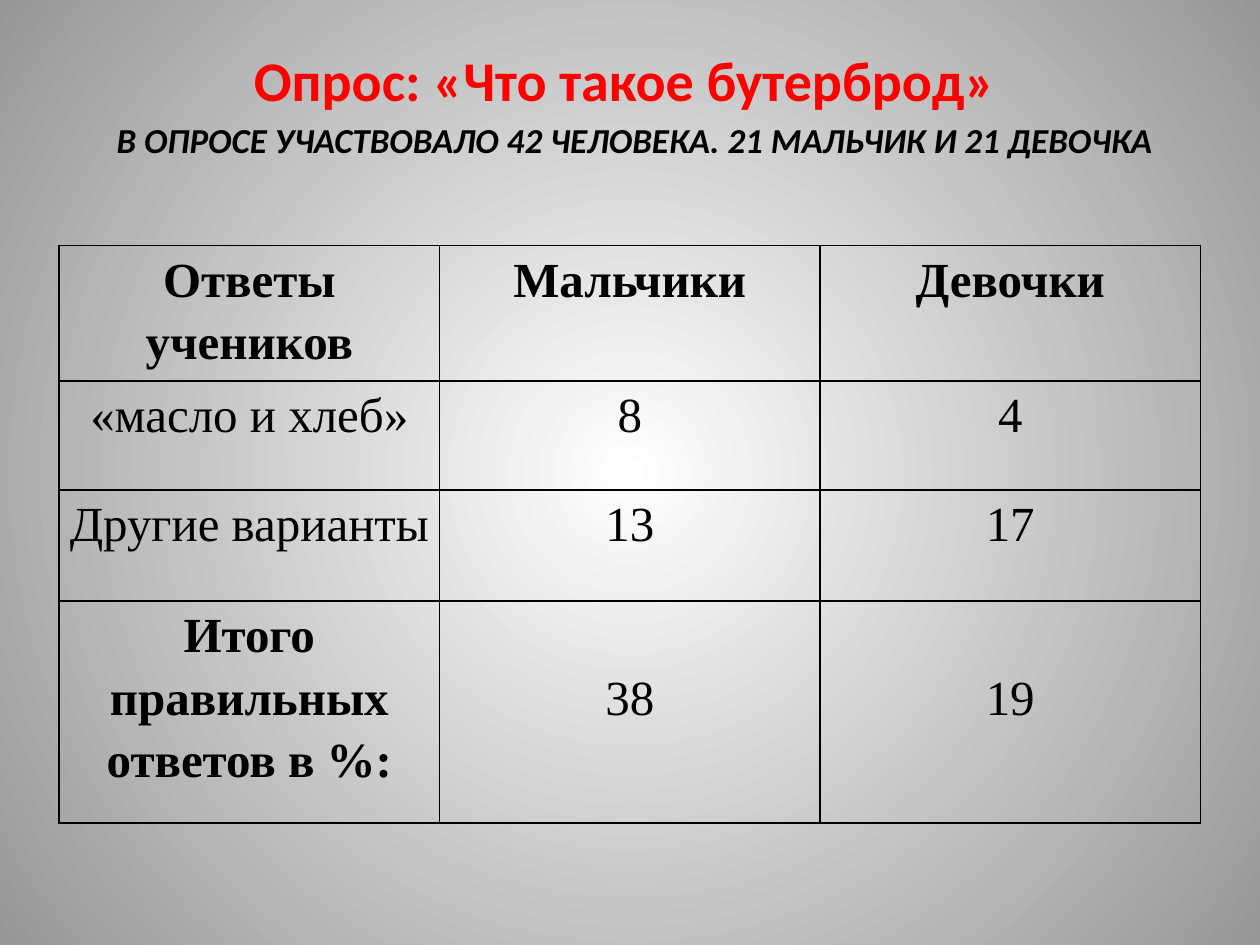
from lxml.etree import SubElement
from pptx import Presentation
from pptx.dml.color import RGBColor
from pptx.enum.text import MSO_ANCHOR, PP_ALIGN
from pptx.oxml import parse_xml
from pptx.oxml.ns import nsdecls, qn
from pptx.util import Cm, Pt

BLACK = RGBColor(0, 0, 0)
RED = RGBColor(255, 0, 0)
WHITE = RGBColor(255, 255, 255)
GREY = RGBColor(0x97, 0x97, 0x97)

TITLE = {"name": "Calibri", "size": Pt(32), "bold": True}
NOTE = {"name": "Calibri", "size": Pt(20), "bold": True, "italic": True}
CELL = {"name": "Times New Roman", "size": Pt(28)}


def write(frame, text, style, color):
    frame.word_wrap = True
    para = frame.paragraphs[0]
    para.alignment = PP_ALIGN.CENTER
    run = para.add_run()
    run.text = text
    for key, value in style.items():
        setattr(run.font, key, value)
    run.font.color.rgb = color
    return para


def border(cell):
    props = cell._tc.get_or_add_tcPr()
    for side in ("lnL", "lnR", "lnT", "lnB"):
        line = SubElement(props, qn(f"a:{side}"), w=str(Pt(1)))
        fill = SubElement(line, qn("a:solidFill"))
        SubElement(fill, qn("a:srgbClr"), val=str(BLACK))


deck = Presentation()
deck.slide_width, deck.slide_height = Cm(25.4), Cm(19.05)
slide = deck.slides.add_slide(deck.slide_layouts[5])

# Radial background
back = slide.background.fill
back.gradient()
for stop, color in zip(back.gradient_stops, (WHITE, GREY)):
    stop.color.rgb = color
lin = next(slide.element.iter(qn("a:lin")))
lin.getparent().replace(lin, parse_xml(
    f'<a:path {nsdecls("a")} path="circle">'
    '<a:fillToRect l="50000" t="50000" r="50000" b="50000"/></a:path>'))

# Heading
title = slide.shapes.title
title.left, title.top, title.width, title.height = (
    Cm(1.98), Cm(0.79), Cm(21.23), Cm(1.63))
title.text_frame.vertical_anchor = MSO_ANCHOR.TOP
write(title.text_frame, "Опрос: «Что такое бутерброд»", TITLE, RED)

note = slide.shapes.add_textbox(Cm(1.4), Cm(1.4), Cm(22.8), Cm(1.96))
note.text_frame.vertical_anchor = MSO_ANCHOR.BOTTOM
write(note.text_frame,
      "В ОПРОСЕ УЧАСТВОВАЛО 42 ЧЕЛОВЕКА. 21 МАЛЬЧИК И 21 ДЕВОЧКА",
      NOTE, BLACK)

# Survey results
rows = [
    ("Ответы учеников", "Мальчики", "Девочки"),
    ("«масло и хлеб»", "8", "4"),
    ("Другие варианты", "13", "17"),
    ("Итого правильных ответов в %:", "38", "19"),
]
tall = [Cm(2.52), Cm(2.2), Cm(2.24), Cm(4.47)]
last = len(rows) - 1
table = slide.shapes.add_table(
    len(rows), 3, Cm(1.19), Cm(4.95), Cm(23.01), sum(tall)).table
table.first_row = table.horz_banding = False

for r, row in enumerate(rows):
    table.rows[r].height = tall[r]
    for c, text in enumerate(row):
        cell = table.cell(r, c)
        border(cell)
        cell.fill.background()
        cell.margin_left = cell.margin_right = Cm(0.17)
        cell.margin_bottom = 0
        # Totals sit one line lower than their label
        cell.margin_top = Cm(1.27) if r == last and c else 0
        bold = r == 0 or (r == last and c == 0)
        para = write(cell.text_frame, text, {**CELL, "bold": bold}, BLACK)
        para.line_spacing = 1.15

deck.save("out.pptx")
